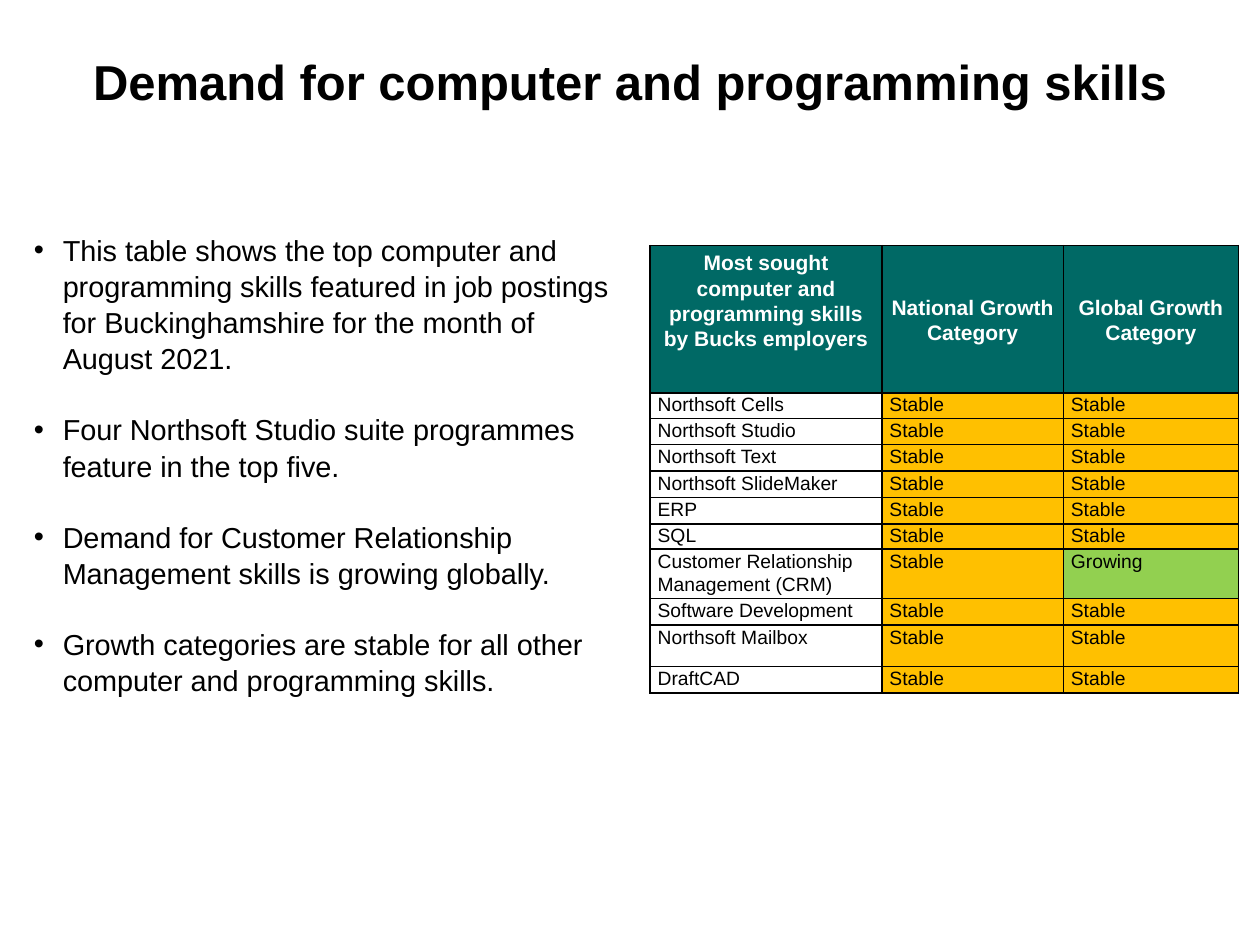
import pptx
import pptx.dml.color
import pptx.enum.text
import pptx.oxml
import pptx.oxml.ns
import pptx.util

COLORS = {"text": "000000", "header": "006965", "header_text": "FFFFFF",
          "Stable": "FFC000", "Growing": "92D050", "border": "000000"}
ALIGN = pptx.enum.text.PP_ALIGN
MIDDLE = pptx.enum.text.MSO_ANCHOR.MIDDLE
TOP = pptx.enum.text.MSO_ANCHOR.TOP


def rgb(name):
    return pptx.dml.color.RGBColor.from_string(COLORS[name])


class Deck:
    font = "Arial"
    columns, rows = 100, 75

    def __init__(self, width, height):
        self.prs = pptx.Presentation()
        self.prs.slide_width = pptx.util.Inches(width)
        self.prs.slide_height = pptx.util.Inches(height)
        self.s = self.prs.slides.add_slide(self.prs.slide_layouts[6])

    def x(self, n):
        return round(self.prs.slide_width * n / self.columns)

    def y(self, n):
        return round(self.prs.slide_height * n / self.rows)

    def style(self, p, size, color="text", bold=False, align=ALIGN.LEFT):
        p.alignment = align
        for r in p.runs:
            r.font.name = self.font
            r.font.size = pptx.util.Pt(size)
            r.font.bold = bold
            r.font.color.rgb = rgb(color)

    def box(self, left, top, width, height, anchor):
        sp = self.s.shapes.add_textbox(self.x(left), self.y(top), self.x(width), self.y(height))
        tf = sp.text_frame
        tf.word_wrap = True
        tf.vertical_anchor = anchor
        return tf

    def title(self, text, left, top, width, height):
        tf = self.box(left, top, width, height, MIDDLE)
        tf.text = text
        self.style(tf.paragraphs[0], 28, bold=True, align=ALIGN.CENTER)

    def bullets(self, items, left, top, width, height, indent=2.3):
        tf = self.box(left, top, width, height, TOP)
        tf.text = "\n".join(items)
        for i, p in enumerate(tf.paragraphs):
            pPr = p._p.get_or_add_pPr()
            pPr.set("marL", str(self.x(indent)))
            pPr.set("indent", str(-self.x(indent)))
            for tag, key, value in (("a:buFont", "typeface", self.font), ("a:buChar", "char", "•")):
                pptx.oxml.ns.qn(tag)
                pPr.append(pptx.oxml.parse_xml(
                    f'<{tag} {pptx.oxml.ns.nsdecls("a")} {key}="{value}"/>'))
            p.line_spacing = 1.05
            if i:
                p.space_before = pptx.util.Pt(19.8)
            self.style(p, 16.5)

    def cell(self, cell, text, fill, header):
        tcPr = cell._tc.get_or_add_tcPr()
        for side in "LRTB":
            tcPr.append(pptx.oxml.parse_xml(
                f'<a:ln{side} {pptx.oxml.ns.nsdecls("a")} w="12700"><a:solidFill>'
                f'<a:srgbClr val="{COLORS["border"]}"/></a:solidFill></a:ln{side}>'))
        if fill:
            cell.fill.solid()
            cell.fill.fore_color.rgb = rgb(fill)
        else:
            cell.fill.background()
        cell.margin_left = cell.margin_right = self.x(0.6)
        cell.margin_top = cell.margin_bottom = 0
        cell.vertical_anchor = MIDDLE if header else TOP
        cell.text_frame.text = text
        p = cell.text_frame.paragraphs[0]
        p.line_spacing = 1.07
        p.space_after = pptx.util.Pt(8)
        if header:
            self.style(p, 12, "header_text", True, ALIGN.CENTER)
        else:
            self.style(p, 11)

    def table(self, header, body, left, top, widths, heights):
        data = [header] + body
        t = self.s.shapes.add_table(len(data), len(header), self.x(left), self.y(top),
                                    self.x(sum(widths)), self.y(sum(heights))).table
        t.first_row = t.horz_banding = False
        for column, width in zip(t.columns, widths):
            column.width = self.x(width)
        for i, (values, height) in enumerate(zip(data, heights)):
            t.rows[i].height = self.y(height)
            for j, value in enumerate(values):
                fill = "header" if i == 0 else value if j else None
                self.cell(t.cell(i, j), value, fill, i == 0)
        t.cell(0, 0).margin_bottom = self.y(3)


def main():
    deck = Deck(10, 7.5)
    deck.title("Demand for computer and programming skills", 5, 0.2, 90, 12.5)
    deck.bullets([
        "This table shows the top computer and programming skills featured in job postings "
        "for Buckinghamshire for the month of August 2021.",
        "Four Northsoft Studio suite programmes feature in the top five.",
        "Demand for Customer Relationship Management skills is growing globally.",
        "Growth categories are stable for all other computer and programming skills.",
    ], 1.7, 17.8, 48.3, 39.9)
    growing = "Customer Relationship Management (CRM)"
    skills = ["Northsoft Cells", "Northsoft Studio", "Northsoft Text", "Northsoft SlideMaker",
              "ERP", "SQL", growing, "Software Development", "Northsoft Mailbox", "DraftCAD"]
    deck.table(
        ["Most sought computer and programming skills by Bucks employers",
         "National Growth Category", "Global Growth Category"],
        [[skill, "Stable", "Growing" if skill == growing else "Stable"] for skill in skills],
        51.6, 19.5, [18.4, 14.4, 13.9],
        [11.7, 2, 2.1, 2.1, 2.1, 2.1, 2, 3.9, 2.1, 3.3, 2.1])
    deck.prs.save("out.pptx")


if __name__ == "__main__":
    main()
